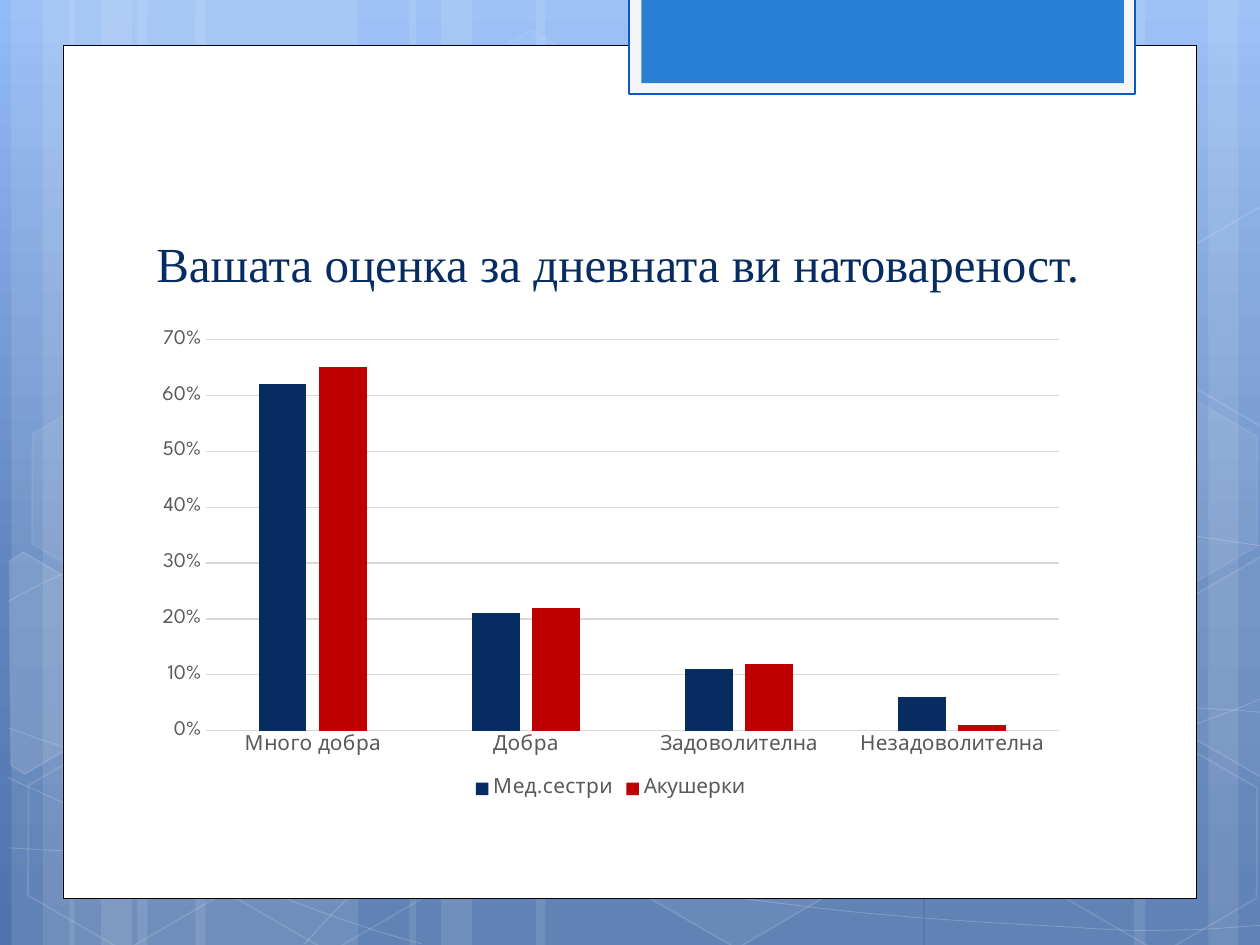
from copy import deepcopy
from math import cos, radians, sin

from lxml import etree
from pptx import Presentation
from pptx import util as u
from pptx.chart.data import CategoryChartData
from pptx.dml.color import RGBColor
from pptx.enum import chart as ch
from pptx.enum import shapes, text
from pptx.oxml.ns import qn


class Theme:
    white, black = "FFFFFF", "000000"
    navy, red, blue, frame_blue = "072C62", "C00000", "297FD5", "0E58C4"
    pale, grid, label = "F5F5F5", "D9D9D9", "595959"
    sky = [(0, "93BBF6"), (0.62, "6085BE"), (1, "4F74AD")]
    title_font, chart_font = "Times New Roman", "League Spartan"
    title_size, chart_size = 28, 11.9


def apply(target, values):
    for name, value in values.items():
        setattr(target, name, value)


def set_color(color_format, rgb):
    color_format.rgb = RGBColor.from_string(rgb)


def set_alpha(fill_parent, percent):
    """Give the solid fill directly inside fill_parent an opacity."""
    if percent < 100:
        color = fill_parent.find(qn("a:solidFill")).find(qn("a:srgbClr"))
        etree.SubElement(color, qn("a:alpha"), val=str(percent * 1000))


class SlideBuilder:
    tilt = 30

    def __init__(self, slide, theme):
        self.slide, self.theme = slide, theme

    def background(self, stops):
        fill = self.slide.background.fill
        fill.gradient()
        fill.gradient_angle = 270
        first = fill.gradient_stops[0]._gs
        first.addnext(deepcopy(first))
        for stop, (position, rgb) in zip(fill.gradient_stops, stops):
            stop.position = position
            set_color(stop.color, rgb)

    def paint(self, shape, fill=None, alpha=100, line=None, width=1, line_alpha=100):
        shape.shadow.inherit = False
        if fill:
            shape.fill.solid()
            set_color(shape.fill.fore_color, fill)
            set_alpha(shape._element.spPr, alpha)
        else:
            shape.fill.background()
        if line:
            set_color(shape.line.color, line)
            shape.line.width = u.Pt(width)
            set_alpha(shape.line._ln, line_alpha)
        else:
            shape.line.fill.background()
        return shape

    def preset(self, kind, box, **style):
        shape = self.slide.shapes.add_shape(kind, *map(u.Inches, box))
        return self.paint(shape, **style)

    def rect(self, box, **style):
        return self.preset(shapes.MSO_SHAPE.RECTANGLE, box, **style)

    def hexagon(self, left, top, fill_alpha, line_alpha):
        style = dict(fill=self.theme.white, alpha=fill_alpha) if fill_alpha else {}
        cell = self.preset(shapes.MSO_SHAPE.HEXAGON, (left, top, 1.75, 1.52),
                           line=self.theme.white, line_alpha=line_alpha, **style)
        cell.rotation = self.tilt
        cell.adjustments[0] = 0.285

    def outline(self, points, close=False, **style):
        start, *rest = [(u.Inches(x), u.Inches(y)) for x, y in points]
        builder = self.slide.shapes.build_freeform(*start)
        builder.add_line_segments(rest, close=close)
        return self.paint(builder.convert_to_shape(), line=self.theme.white, **style)

    def cut_cell(self, center, points, **style):
        """Draw a tilted cell: turn its points back, then rotate the shape."""
        (cx, cy), c, s = center, cos(radians(self.tilt)), sin(radians(self.tilt))
        upright = [(cx + (x - cx) * c + (y - cy) * s, cy - (x - cx) * s + (y - cy) * c)
                   for x, y in points]
        self.outline(upright, close=True, line_alpha=12, **style).rotation = self.tilt

    def curve(self, start, segments):
        shape = self.outline([start] + [seg[-2:] for seg in segments], width=0.5, line_alpha=20)
        for step, seg in zip(list(shape._element.iter(qn("a:lnTo"))), segments):
            if len(seg) == 6:
                step.tag = qn("a:cubicBezTo")
                for i in (0, 2):
                    control = etree.Element(qn("a:pt"), x=str(u.Inches(seg[i]) - shape.left),
                                            y=str(u.Inches(seg[i + 1]) - shape.top))
                    step.insert(i // 2, control)

    def title(self, words, box):
        heading = self.slide.shapes.title
        # The placeholder comes first in the tree; bring it above the panel
        self.slide.shapes._spTree.append(heading._element)
        apply(heading, dict(zip(("left", "top", "width", "height"), map(u.Inches, box))))
        frame = heading.text_frame
        frame.text = words
        apply(frame, dict(word_wrap=True, vertical_anchor=text.MSO_ANCHOR.BOTTOM,
                          auto_size=text.MSO_AUTO_SIZE.NONE))
        frame.paragraphs[0].alignment = text.PP_ALIGN.LEFT
        self.font(frame.paragraphs[0].runs[0].font, self.theme.title_font,
                  self.theme.title_size, self.theme.navy)

    def font(self, font, name, size, rgb):
        apply(font, dict(name=name, size=u.Pt(size), bold=False))
        set_color(font.color, rgb)

    def column_chart(self, box, categories, series):
        theme = self.theme
        data = CategoryChartData(number_format="0%")
        data.categories = categories
        for name, values, _ in series:
            data.add_series(name, values)
        chart = self.slide.shapes.add_chart(
            ch.XL_CHART_TYPE.COLUMN_CLUSTERED, *map(u.Inches, box), data).chart
        apply(chart, dict(has_title=False, has_legend=True))
        apply(chart.legend, dict(position=ch.XL_LEGEND_POSITION.BOTTOM, include_in_layout=False))
        plot = chart.plots[0]
        apply(plot, dict(gap_width=219, overlap=-27, vary_by_categories=False))
        for columns, (_, _, rgb) in zip(plot.series, series):
            columns.invert_if_negative = False
            columns.format.fill.solid()
            set_color(columns.format.fill.fore_color, rgb)

        category_axis, value_axis = chart.category_axis, chart.value_axis
        value_axis.has_major_gridlines = True
        apply(value_axis.tick_labels, dict(number_format="0%", number_format_is_linked=False))
        value_axis.format.line.fill.background()
        for axis in (category_axis, value_axis):
            apply(axis, dict(major_tick_mark=ch.XL_TICK_MARK.NONE,
                             minor_tick_mark=ch.XL_TICK_MARK.NONE))
        for line in (category_axis.format.line, value_axis.major_gridlines.format.line):
            set_color(line.color, theme.grid)
            line.width = u.Pt(0.75)
        for part in (chart, category_axis.tick_labels, value_axis.tick_labels, chart.legend):
            self.font(part.font, theme.chart_font, theme.chart_size, theme.label)


# Backdrop stripes: left, width
STRIPES = [(1.09, 1.75), (0.09, 0.5), (0.34, 0.83), (1.55, 1.75), (0.55, 0.5), (0.8, 0.83),
           (7.34, 1.75), (9.59, 0.5), (9, 0.83), (4.25, 3.08), (3.25, 0.5), (3.5, 0.83)]
# Thin lines: start point, then cubic or straight segments
CURVES = [
    ((0.07, 6.73), [(0.61, 6.76, 1.15, 6.79, 1.9, 6.78), (2.65, 6.77, 3.58, 6.75, 4.58, 6.65),
                    (5.58, 6.55, 7, 6.36, 7.92, 6.17), (8.83, 5.98, 9.77, 5.68, 10.07, 5.51)]),
    ((0.07, 4.77), [(0.36, 4.61, 0.65, 4.46, 1.21, 4.31), (1.78, 4.16, 2.59, 3.94, 3.47, 3.87),
                    (4.36, 3.8, 5.44, 3.79, 6.54, 3.87), (7.64, 3.95, 9.47, 4.26, 10.07, 4.34)]),
    ((0.06, 6.17), [(1.27, 6.72, 2.47, 7.27, 3.35, 7.49)]),
    ((0.07, 5.78), [(0.38, 5.89, 0.7, 6, 1.28, 6.16), (1.86, 6.31, 2.73, 6.56, 3.57, 6.73),
                    (4.4, 6.9, 5.45, 7.08, 6.28, 7.18), (7.11, 7.29, 8, 7.33, 8.53, 7.36),
                    (9.06, 7.4, 9.19, 7.38, 9.45, 7.38), (9.71, 7.37, 9.89, 7.35, 10.07, 7.34)]),
    ((2.42, 7.49), [(2.6, 7.29, 2.78, 7.09, 3.02, 6.91), (3.26, 6.72, 3.6, 6.53, 3.88, 6.39),
                    (4.16, 6.25, 4.33, 6.19, 4.69, 6.09), (5.06, 5.99, 5.73, 5.85, 6.08, 5.78),
                    (6.44, 5.71, 6.49, 5.71, 6.8, 5.69), (7.11, 5.66, 7.6, 5.63, 7.94, 5.62),
                    (8.29, 5.61, 8.86, 5.62, 8.86, 5.62), (9.53, 5.62),
                    (9.71, 5.63, 9.88, 5.64, 9.97, 5.65), (10.06, 5.66, 10.03, 5.65, 10.06, 5.66)])]
# Hexagons: left, top, fill opacity, line opacity
HEXAGONS = [(3.34, 0.36, 4, 8), (4.97, 5.89, 6, 12), (0.11, 5.91, 0, 12), (0.14, 3.12, 7, 8),
            (1.74, 5.92, 0, 12), (7.53, 4.53, 10, 12), (8.34, 5.93, 0, 12), (8.34, 3.14, 7, 8)]
# Hexagons cut by the slide edge
LEFT_CELL = [(0.08, 4.45), (0.19, 4.38), (0.96, 4.83), (0.95, 5.7), (0.2, 6.14), (0.09, 6.07)]
RIGHT_CELL = [(9.26, 4.85), (10.02, 4.41), (10.09, 4.46), (10.09, 6.13), (10.02, 6.17), (9.26, 5.73)]
UPPER_CELL = [(x, y - 2.78) for x, y in RIGHT_CELL]


def main():
    deck = Presentation()
    apply(deck, dict(slide_width=u.Inches(10), slide_height=u.Inches(7.5)))
    theme = Theme()
    page = SlideBuilder(deck.slides.add_slide(deck.slide_layouts[5]), theme)

    # Backdrop
    page.background(theme.sky)
    for left, width in STRIPES:
        page.rect((left, 0, width, 7.5), fill=theme.white, alpha=10)
    for start, segments in CURVES:
        page.curve(start, segments)
    for cell in HEXAGONS:
        page.hexagon(*cell)
    page.cut_cell((0.36, 5.36), LEFT_CELL, fill=theme.white, alpha=10)
    page.cut_cell((9.85, 5.2), RIGHT_CELL, fill=theme.white, alpha=4)
    page.cut_cell((9.85, 2.41), UPPER_CELL)

    # Panel and tab
    page.rect((0.5, 0.36, 9, 6.77), fill=theme.white, line=theme.black, width=0.5)
    page.rect((4.99, -0.02, 4.02, 0.77), fill=theme.pale, line=theme.frame_blue, width=1.25)
    page.rect((5.09, -0.02, 3.83, 0.68), fill=theme.blue)

    # Content
    page.title("Вашата оценка за дневната ви натовареност.", (1.14, 1.12, 7.68, 1.25))
    page.column_chart(
        (1.14, 2.54, 7.41, 3.84), ["Много добра", "Добра", "Задоволителна", "Незадоволителна"],
        [("Мед.сестри", [0.62, 0.21, 0.11, 0.06], theme.navy),
         ("Акушерки", [0.65, 0.22, 0.12, 0.01], theme.red)])
    deck.save("out.pptx")


if __name__ == "__main__":
    main()
